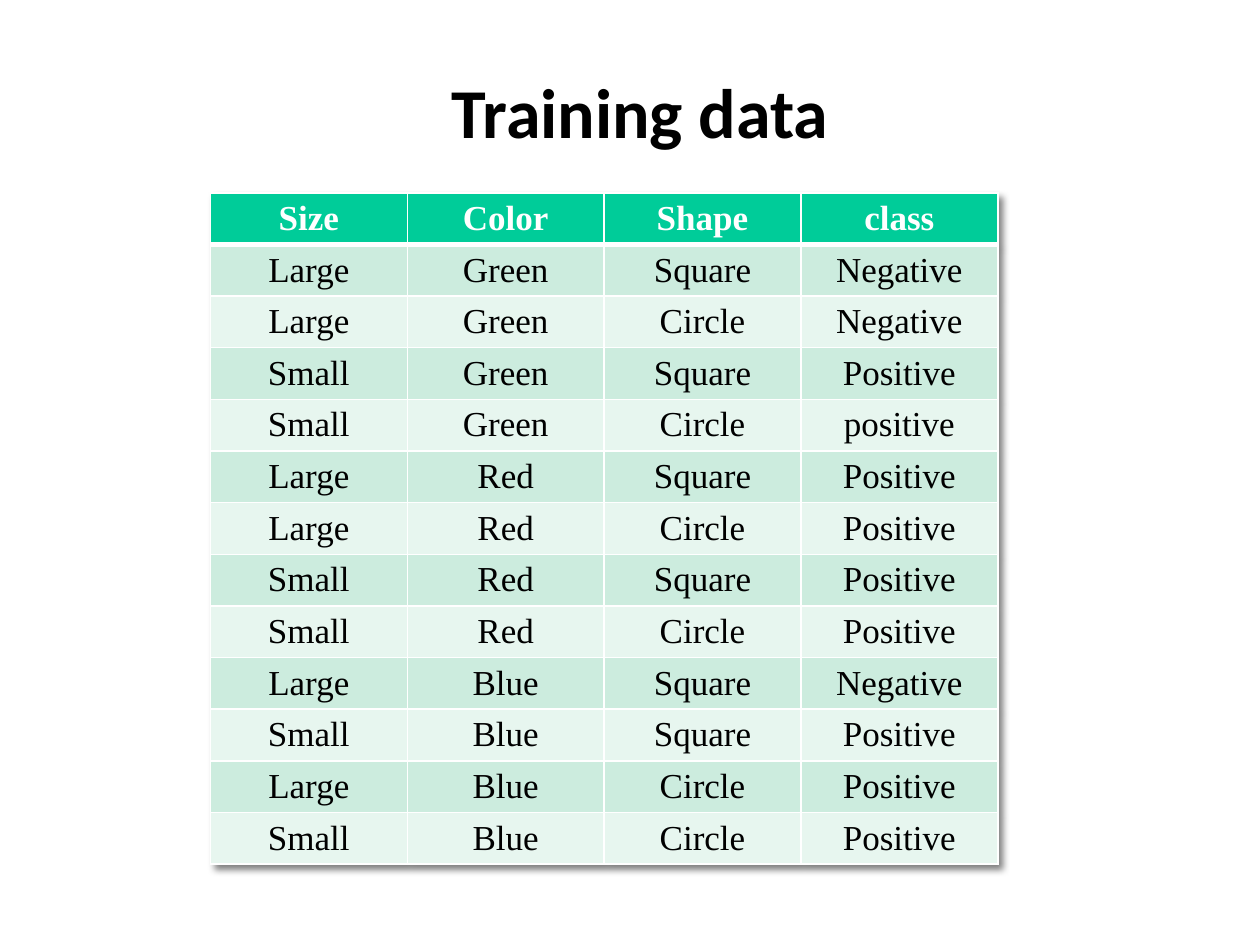
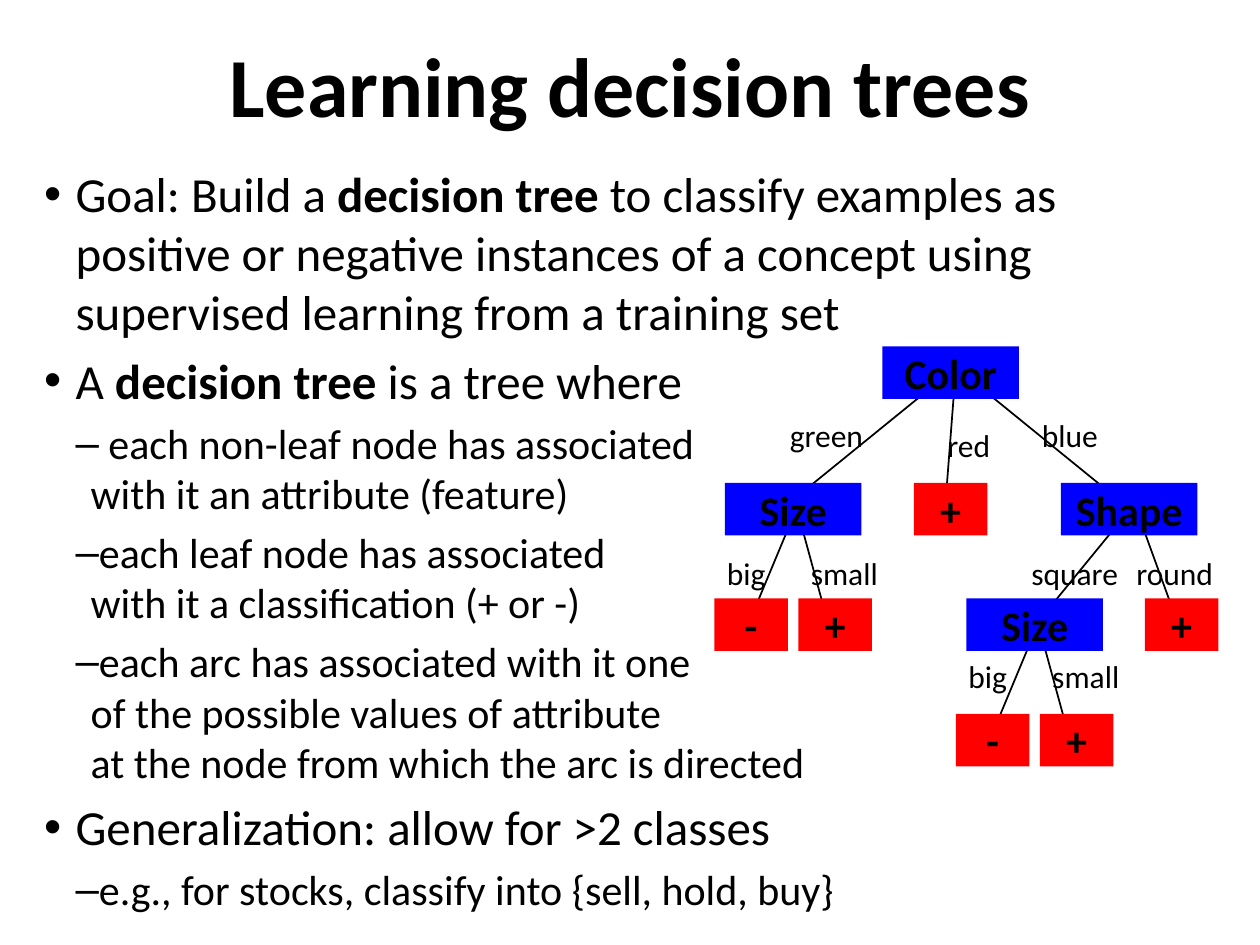
import lxml.etree
import pptx
import pptx.dml.color
import pptx.enum.shapes
import pptx.enum.text
import pptx.oxml.ns
import pptx.util

Inches = pptx.util.Inches
Pt = pptx.util.Pt
qn = pptx.oxml.ns.qn
Align = pptx.enum.text.PP_ALIGN
Anchor = pptx.enum.text.MSO_ANCHOR

HEADING_FONT = "Calibri"
TABLE_FONT = "Times New Roman"
BLACK, WHITE = "000000", "FFFFFF"
HEADER_GREEN = "00CC99"
ROW_BANDS = ("CCECDE", "E7F6EF")
NODE_BLUE, LEAF_RED = "0000FF", "FF0000"

TRAINING_DATA = [
    ("Size", "Color", "Shape", "class"),
    ("Large", "Green", "Square", "Negative"),
    ("Large", "Green", "Circle", "Negative"),
    ("Small", "Green", "Square", "Positive"),
    ("Small", "Green", "Circle", "positive"),
    ("Large", "Red", "Square", "Positive"),
    ("Large", "Red", "Circle", "Positive"),
    ("Small", "Red", "Square", "Positive"),
    ("Small", "Red", "Circle", "Positive"),
    ("Large", "Blue", "Square", "Negative"),
    ("Small", "Blue", "Square", "Positive"),
    ("Large", "Blue", "Circle", "Positive"),
    ("Small", "Blue", "Circle", "Positive"),
]

# (level, text); asterisks enclose bold words
BULLETS = [
    (0, "Goal: Build a *decision tree* to classify examples as positive or negative "
        "instances of a concept using supervised learning from a training set"),
    (0, "A *decision tree* is a tree where"),
    (1, " each non-leaf node has associated\nwith it an attribute (feature)"),
    (1, "each leaf node has associated\nwith it a classification (+ or -)"),
    (1, "each arc has associated with it one\nof the possible values of attribute\n"
        "at the node from which the arc is directed"),
    (0, "Generalization: allow for >2 classes"),
    (1, "e.g., for stocks, classify into {sell, hold, buy}"),
]
# size in points, left margin and first-line indent in inches, per level
BULLET_STYLES = [(28, 0.25, -0.25), (24, 0.37, -0.12)]

# The tree lies on a grid of twelfths of an inch
GRID = 1 / 12
NODE_HEIGHT = 5
TREE_NODES = [
    ("Color", 16, 0), ("Shape", 33, 13), ("Size", 1, 13), ("+", 19, 13),
    ("+", 8, 24), ("-", 0, 24), ("Size", 24, 24), ("+", 41, 24),
    ("+", 31, 35), ("-", 23, 35),
]
TREE_ARCS = [
    (23, 2, 7, 15), (23, 2, 22, 15), (23, 2, 39, 15),
    (8, 15, 3, 27), (8, 16, 11, 27),
    (40, 15, 31, 26), (40, 15, 44, 26),
    (31, 26, 26, 38), (31, 27, 34, 38),
]
ARC_LABELS = [
    ("green", 6, 6), ("red", 21, 7), ("blue", 30, 6),
    ("big", 0, 19.2), ("small", 8, 19.2), ("square", 29, 19.2), ("round", 39, 19.2),
    ("big", 23, 29), ("small", 31, 29),
]
LABEL_WIDTHS = {"green": 0.79, "red": 0.55, "blue": 0.65, "big": 0.52,
                "small": 0.74, "square": 0.9, "round": 0.82}


def color(hex_string):
    return pptx.dml.color.RGBColor.from_string(hex_string)


def fill_solid(item, hex_string):
    item.fill.solid()
    item.fill.fore_color.rgb = color(hex_string)


def style_paragraph(para, size, bold=False, font=HEADING_FONT, ink=BLACK, align=None):
    if align is not None:
        para.alignment = align
    for span in para.runs:
        span.font.name = font
        span.font.size = Pt(size)
        span.font.bold = bold
        span.font.color.rgb = color(ink)


def place(shape, box):
    shape.left, shape.top, shape.width, shape.height = map(Inches, box)


def add_titled_page(deck, layout_name, title, box, size):
    page = deck.slides.add_slide(deck.slide_layouts.get_by_name(layout_name))
    place(page.shapes.title, box)
    frame = page.shapes.title.text_frame
    frame.text = title
    frame.vertical_anchor = Anchor.MIDDLE
    style_paragraph(frame.paragraphs[0], size, bold=True, align=Align.CENTER)
    return page


def set_cell_borders(cell, bottom_width):
    """White rules on all sides; the borders must come before the cell's fill."""
    properties = cell._tc.get_or_add_tcPr()
    widths = {"a:lnL": 1, "a:lnR": 1, "a:lnT": 1, "a:lnB": bottom_width}
    for index, (tag, width) in enumerate(widths.items()):
        line = lxml.etree.Element(qn(tag), w=str(Pt(width)))
        solid = lxml.etree.SubElement(line, qn("a:solidFill"))
        lxml.etree.SubElement(solid, qn("a:srgbClr"), val=WHITE)
        properties.insert(index, line)


def add_table_shadow(table):
    effects = lxml.etree.Element(qn("a:effectLst"))
    shadow = lxml.etree.SubElement(
        effects, qn("a:outerShdw"), blurRad=str(Pt(4)), dist=str(Pt(4)),
        dir="2700000", algn="tl", rotWithShape="0")
    ink = lxml.etree.SubElement(shadow, qn("a:srgbClr"), val=BLACK)
    lxml.etree.SubElement(ink, qn("a:alpha"), val="50000")
    table._tbl.tblPr.insert(0, effects)


def add_training_table(page, box):
    row_count, column_count = len(TRAINING_DATA), len(TRAINING_DATA[0])
    left, top, width, height = map(Inches, box)
    table = page.shapes.add_table(row_count, column_count, left, top, width, height).table
    add_table_shadow(table)
    for row_index, values in enumerate(TRAINING_DATA):
        header = row_index == 0
        for column_index, value in enumerate(values):
            cell = table.cell(row_index, column_index)
            cell.text = value
            fill_solid(cell, HEADER_GREEN if header else ROW_BANDS[(row_index - 1) % 2])
            set_cell_borders(cell, 3 if header else 1)
            style_paragraph(cell.text_frame.paragraphs[0], 20, header, TABLE_FONT,
                            WHITE if header else BLACK, Align.CENTER)


def fill_bullets(body, box):
    place(body, box)
    frame = body.text_frame
    frame.auto_size = pptx.enum.text.MSO_AUTO_SIZE.NONE
    for index, (level, text) in enumerate(BULLETS):
        para = frame.paragraphs[0] if index == 0 else frame.add_paragraph()
        size, margin, indent = BULLET_STYLES[level]
        para.level = level
        para.text = text.replace("*", "").replace("\n", "\v")
        if "*" in text:
            para.text = ""
            for part in text.split("*"):
                para.add_run().text = part
        style_paragraph(para, size)
        if "*" in text:
            para.runs[1].font.bold = True
        properties = para._p.get_or_add_pPr()
        properties.set("marL", str(Inches(margin)))
        properties.set("indent", str(Inches(indent)))
        for line_break in para._p.findall(qn("a:br")):
            lxml.etree.SubElement(line_break, qn("a:rPr"), sz=str(size * 100))


def add_decision_tree(page, left, top):
    tree = page.shapes.add_group_shape().shapes

    def at(column, row):
        return Inches(left + column * GRID), Inches(top + row * GRID)

    for start_column, start_row, end_column, end_row in TREE_ARCS:
        arc = tree.add_connector(pptx.enum.shapes.MSO_CONNECTOR.STRAIGHT,
                                 *at(start_column, start_row), *at(end_column, end_row))
        arc.line.color.rgb = color(BLACK)
        arc.line.width = Pt(1)
        lxml.etree.SubElement(arc._element.spPr, qn("a:effectLst"))

    for text, column, row in TREE_NODES:
        leaf = text in "+-"
        node = tree.add_shape(pptx.enum.shapes.MSO_SHAPE.RECTANGLE, *at(column, row),
                              Inches((7 if leaf else 13) * GRID), Inches(NODE_HEIGHT * GRID))
        node.shadow.inherit = False
        fill_solid(node, LEAF_RED if leaf else NODE_BLUE)
        node.line.fill.background()
        frame = node.text_frame
        frame.text = text
        frame.word_wrap = False
        frame.vertical_anchor = Anchor.MIDDLE
        style_paragraph(frame.paragraphs[0], 24, bold=True, align=Align.CENTER)

    for text, column, row in ARC_LABELS:
        label = tree.add_textbox(*at(column, row), Inches(LABEL_WIDTHS[text]), Inches(0.4))
        frame = label.text_frame
        frame.text = text
        frame.word_wrap = False
        frame.auto_size = pptx.enum.text.MSO_AUTO_SIZE.SHAPE_TO_FIT_TEXT
        style_paragraph(frame.paragraphs[0], 18)


def build_training_page(deck):
    page = add_titled_page(deck, "Title Only", "Training data", (0.83, 0.25, 8.5, 1.25), 40)
    add_training_table(page, (1.67, 1.53, 6.25, 5.33))


def build_tree_page(deck):
    page = add_titled_page(deck, "Title and Content", "Learning decision trees",
                           (0.75, 0.08, 8.5, 1.17), 48)
    fill_bullets(page.placeholders[1], (0.25, 1.25, 8.42, 5.25))
    add_decision_tree(page, 5.67, 2.75)


def main():
    deck = pptx.Presentation()
    deck.slide_width, deck.slide_height = Inches(10), Inches(7.5)
    build_training_page(deck)
    build_tree_page(deck)
    deck.save("out.pptx")


if __name__ == "__main__":
    main()
